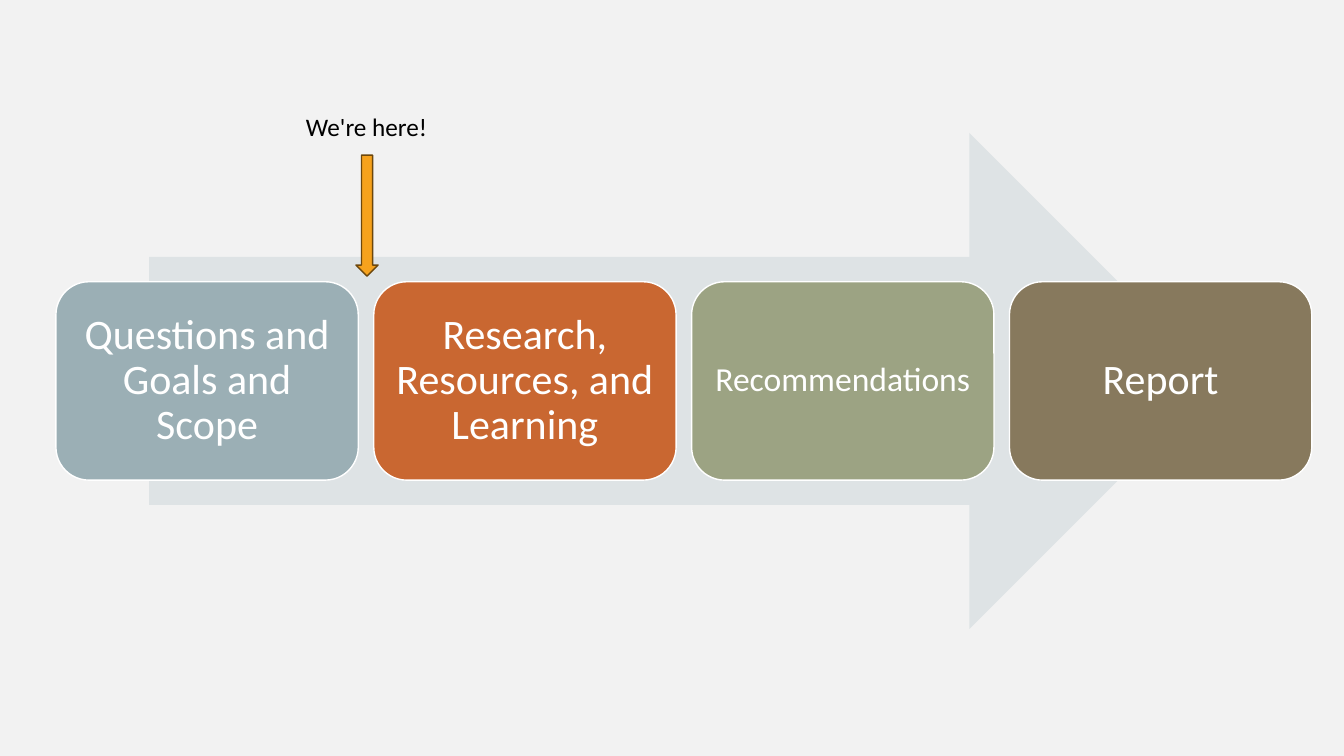
from pptx import Presentation
from pptx.dml.color import RGBColor
from pptx.enum.shapes import MSO_SHAPE
from pptx.enum.text import MSO_ANCHOR, PP_ALIGN
from pptx.util import Cm, Pt

COLORS = {
    "background": "F2F2F2",
    "band": "DEE3E5",
    "blue": "9BAFB5",
    "rust": "C96731",
    "green": "9CA383",
    "brown": "87795D",
    "marker": "F6A21D",
    "marker_line": "6C470D",
    "white": "FFFFFF",
    "black": "000000",
}
FONT = "Calibri"
STEPS = [
    ("Questions and Goals and Scope", "blue", 30, 0.3),
    ("Research, Resources, and Learning", "rust", 30, 0.3),
    ("Recommendations", "green", 24, 0.25),
    ("Report", "brown", 30, 0.3),
]
MARKER_TEXT = "We're here!"

BAND = (3.76, 3.35, 26.92, 12.5)
MARKER = (8.97, 3.91, 0.56, 3.05)
LABEL = (7.26, 2.69, 3.96, 1.02)
CARD_LEFT, CARD_WIDTH, CARD_HEIGHT, CARD_PITCH = 1.41, 7.62, 5, 8.01
CARD_TOP = BAND[1] + (BAND[3] - CARD_HEIGHT) / 2


def color(name):
    return RGBColor.from_string(COLORS[name])


def add_block(page, kind, bounds, fill, line=None):
    block = page.shapes.add_shape(kind, *map(Cm, bounds))
    block.shadow.inherit = False
    block.fill.solid()
    block.fill.fore_color.rgb = color(fill)
    if line:
        block.line.color.rgb = color(line)
        block.line.width = Pt(1)
    else:
        block.line.fill.background()
    return block


def write(box, text, size, ink, spacing=1.0):
    frame = box.text_frame
    frame.word_wrap = True
    frame.text = text
    para = frame.paragraphs[0]
    para.alignment = PP_ALIGN.CENTER
    para.line_spacing = spacing
    span = para.runs[0]
    span.font.name = FONT
    span.font.size = Pt(size)
    span.font.color.rgb = color(ink)
    return frame


def main():
    deck = Presentation()
    deck.slide_width, deck.slide_height = Cm(33.87), Cm(19.05)
    page = deck.slides.add_slide(deck.slide_layouts[6])
    page.background.fill.solid()
    page.background.fill.fore_color.rgb = color("background")

    add_block(page, MSO_SHAPE.RIGHT_ARROW, BAND, "band")

    for index, (text, fill, size, inset) in enumerate(STEPS):
        bounds = (CARD_LEFT + index * CARD_PITCH, CARD_TOP, CARD_WIDTH, CARD_HEIGHT)
        card = add_block(page, MSO_SHAPE.ROUNDED_RECTANGLE, bounds, fill, "white")
        frame = write(card, text, size, "white", 0.9)
        frame.vertical_anchor = MSO_ANCHOR.MIDDLE
        frame.margin_left = frame.margin_right = Cm(inset)
        frame.margin_top = frame.margin_bottom = Cm(inset)

    add_block(page, MSO_SHAPE.DOWN_ARROW, MARKER, "marker", "marker_line")
    label = page.shapes.add_textbox(*map(Cm, LABEL))
    write(label, MARKER_TEXT, 18, "black")

    deck.save("out.pptx")


if __name__ == "__main__":
    main()
